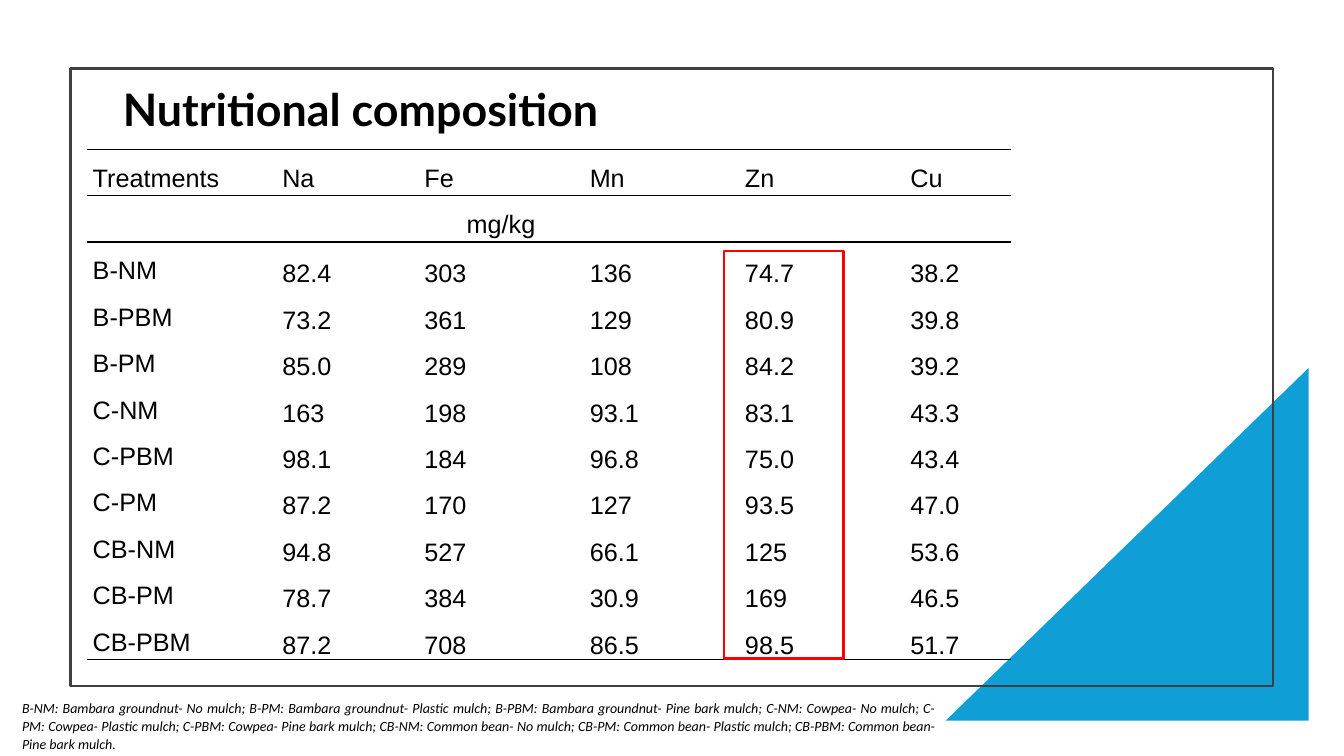
from dataclasses import dataclass

from lxml import etree
from pptx import Presentation
from pptx.dml.color import RGBColor
from pptx.enum.shapes import MSO_SHAPE
from pptx.enum.text import MSO_ANCHOR, PP_ALIGN
from pptx.oxml.ns import qn
from pptx.util import Emu, Pt

RECTANGLE = MSO_SHAPE.RECTANGLE
RIGHT_TRIANGLE = MSO_SHAPE.RIGHT_TRIANGLE
TOP, MIDDLE, BOTTOM = MSO_ANCHOR.TOP, MSO_ANCHOR.MIDDLE, MSO_ANCHOR.BOTTOM
LEFT, CENTER, JUSTIFY = PP_ALIGN.LEFT, PP_ALIGN.CENTER, PP_ALIGN.JUSTIFY

EMU_PER_PX = 9144  # 100 px to the inch
BLACK, BLUE, RED, GREY = "000000", "0F9ED5", "FF0000", "404040"

COLUMN_WIDTHS = [188, 141, 164, 154, 164, 106]
ROW_HEIGHT = 43
UNIT_ROW = 1
ROWS = [
    ["Treatments", "Na", "Fe", "Mn", "Zn", "Cu"],
    ["", "", "mg/kg", "", "", ""],
    ["B-NM", "82.4", "303", "136", "74.7", "38.2"],
    ["B-PBM", "73.2", "361", "129", "80.9", "39.8"],
    ["B-PM", "85.0", "289", "108", "84.2", "39.2"],
    ["C-NM", "163", "198", "93.1", "83.1", "43.3"],
    ["C-PBM", "98.1", "184", "96.8", "75.0", "43.4"],
    ["C-PM", "87.2", "170", "127", "93.5", "47.0"],
    ["CB-NM", "94.8", "527", "66.1", "125", "53.6"],
    ["CB-PM", "78.7", "384", "30.9", "169", "46.5"],
    ["CB-PBM", "87.2", "708", "86.5", "98.5", "51.7"],
]
LAST_ROW = len(ROWS) - 1
RULED_ABOVE = {0, 1, 2}
RULED_BELOW = {0, 1, LAST_ROW}

ABBREVIATIONS = (
    "B-NM: Bambara groundnut- No mulch; B-PM: Bambara groundnut- Plastic mulch; "
    "B-PBM: Bambara groundnut- Pine bark mulch; C-NM: Cowpea- No mulch; "
    "C-PM: Cowpea- Plastic mulch; C-PBM: Cowpea- Pine bark mulch; "
    "CB-NM: Common bean- No mulch; CB-PM: Common bean- Plastic mulch; "
    "CB-PBM: Common bean- Pine bark mulch."
)


@dataclass
class Box:
    left: int
    top: int
    width: int
    height: int

    def emu(self) -> tuple:
        return tuple(px(n) for n in (self.left, self.top, self.width, self.height))


@dataclass
class Figure:
    box: Box
    kind: MSO_SHAPE
    fill: str = ""
    line: str = ""
    line_width: float = 0
    flipped: bool = False


TRIANGLE = Figure(Box(938, 365, 360, 350), RIGHT_TRIANGLE, fill=BLUE, flipped=True)
FRAME = Figure(Box(70, 68, 1193, 613), RECTANGLE, line=GREY, line_width=1.5)
ZINC_HIGHLIGHT = Figure(Box(718, 249, 119, 404), RECTANGLE, line=RED, line_width=2)


def px(length: int) -> Emu:
    return Emu(length * EMU_PER_PX)


def color(value: str) -> RGBColor:
    return RGBColor.from_string(value)


def write_text(text_frame, text: str, *, font: str, size: int, bold: bool = False,
               italic: bool = False, align=LEFT, line_spacing: float = 1.0,
               space_after: int = 0) -> None:
    paragraph = text_frame.paragraphs[0]
    paragraph.alignment = align
    paragraph.line_spacing = line_spacing
    paragraph.space_after = Pt(space_after)
    run = paragraph.add_run()
    run.text = text
    run.font.name, run.font.size = font, Pt(size)
    run.font.bold, run.font.italic = bold, italic
    run.font.color.rgb = color(BLACK)


def add_figure(slide, figure: Figure) -> None:
    shape = slide.shapes.add_shape(figure.kind, *figure.box.emu())
    shape.shadow.inherit = False
    if figure.fill:
        shape.fill.solid()
        shape.fill.fore_color.rgb = color(figure.fill)
    else:
        shape.fill.background()
    if figure.line:
        shape.line.color.rgb = color(figure.line)
        shape.line.width = Pt(figure.line_width)
    else:
        shape.line.fill.background()
    if figure.flipped:
        shape._element.spPr.xfrm.set("flipH", "1")


def add_text_box(slide, box: Box, text: str, anchor=TOP, **text_format) -> None:
    text_frame = slide.shapes.add_textbox(*box.emu()).text_frame
    text_frame.word_wrap = True
    text_frame.vertical_anchor = anchor
    write_text(text_frame, text, **text_format)


def set_borders(cell, above: bool, below: bool) -> None:
    properties = cell._tc.get_or_add_tcPr()
    sides = {"a:lnL": False, "a:lnR": False, "a:lnT": above, "a:lnB": below}
    for tag, ruled in sides.items():
        border = etree.SubElement(properties, qn(tag), w=str(Pt(1)))
        if ruled:
            fill = etree.SubElement(border, qn("a:solidFill"))
            etree.SubElement(fill, qn("a:srgbClr"), val=BLACK)
        else:
            etree.SubElement(border, qn("a:noFill"))


def add_nutrient_table(slide, left: int, top: int) -> None:
    box = Box(left, top, sum(COLUMN_WIDTHS), ROW_HEIGHT * len(ROWS))
    table = slide.shapes.add_table(len(ROWS), len(COLUMN_WIDTHS), *box.emu()).table
    table.first_row = table.horz_banding = False
    for column, width in zip(table.columns, COLUMN_WIDTHS):
        column.width = px(width)
    for row_index, values in enumerate(ROWS):
        table.rows[row_index].height = px(ROW_HEIGHT)
        for column_index, value in enumerate(values):
            cell = table.cell(row_index, column_index)
            cell.margin_left = cell.margin_right = px(6)
            cell.margin_top, cell.margin_bottom = px(1), 0
            is_value = row_index > UNIT_ROW and column_index > 0
            cell.vertical_anchor = BOTTOM if is_value else TOP
            set_borders(cell, row_index in RULED_ABOVE, row_index in RULED_BELOW)
            cell.fill.background()
            if value:
                write_text(cell.text_frame, value, font="Arial", size=18, line_spacing=1.5,
                           align=CENTER if row_index == UNIT_ROW else LEFT)


def main() -> None:
    presentation = Presentation()
    presentation.slide_width, presentation.slide_height = px(1333), px(750)
    slide = presentation.slides.add_slide(presentation.slide_layouts[6])

    # Background decoration
    add_figure(slide, TRIANGLE)
    add_figure(slide, FRAME)

    # Title and table
    add_text_box(slide, Box(112, 68, 883, 80), "Nutritional composition", MIDDLE,
                 font="Lato", size=32, bold=True)
    add_nutrient_table(slide, 86, 148)

    # Abbreviations and highlighted zinc column
    add_text_box(slide, Box(12, 688, 925, 63), ABBREVIATIONS, font="Calibri", size=10,
                 italic=True, align=JUSTIFY, line_spacing=1.07, space_after=8)
    add_figure(slide, ZINC_HIGHLIGHT)

    presentation.save("out.pptx")


if __name__ == "__main__":
    main()
